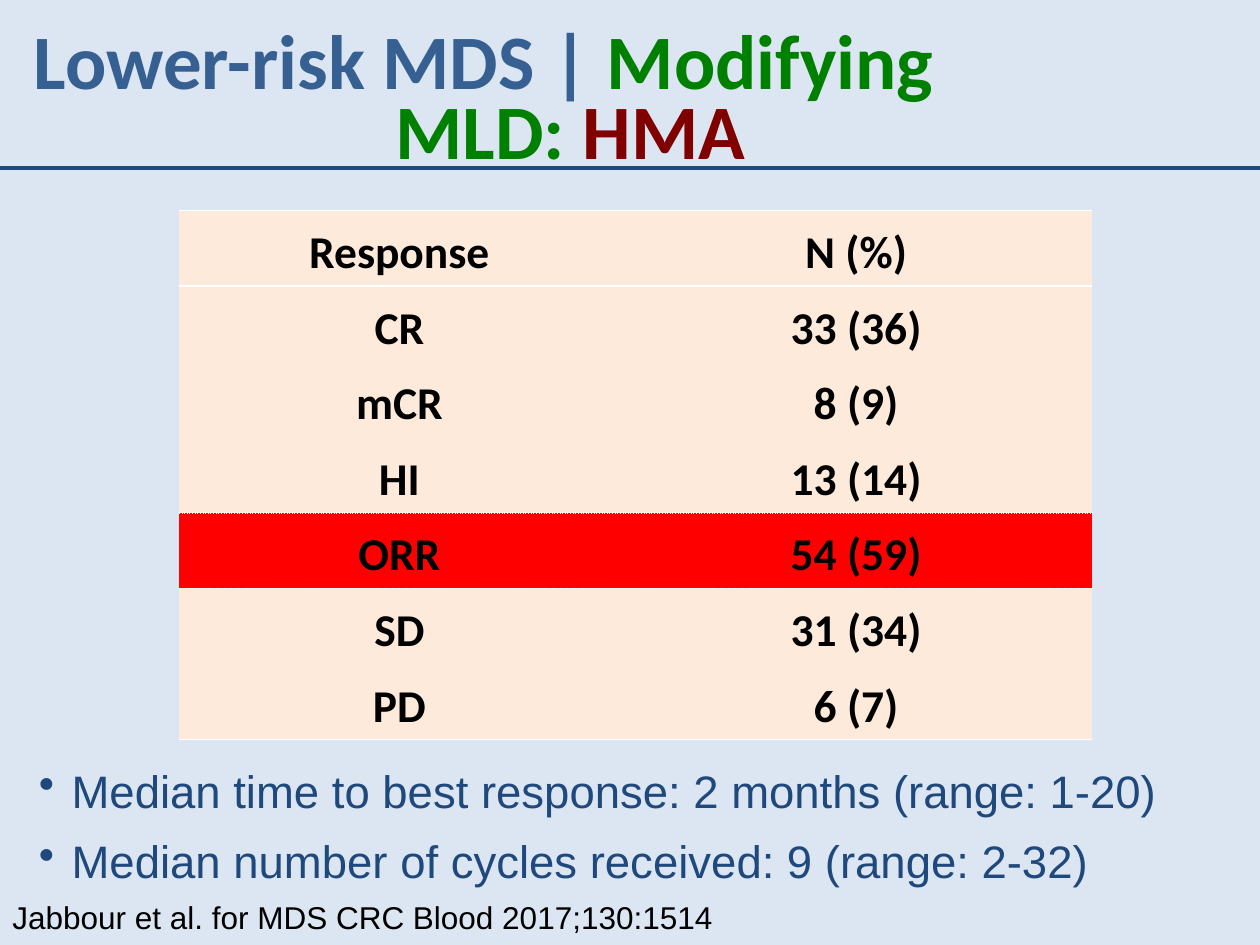
from lxml import etree
from pptx import Presentation, util as u
from pptx.dml.color import RGBColor
from pptx.enum import shapes, text
from pptx.oxml.ns import qn

THEME = {
    "background": "DCE6F2", "rule": "1F497D", "body": "1F497D", "black": "000000",
    "topic": "376092", "approach": "008000", "drug": "800000",
    "cell": "FDEADA", "highlight": "FF0000", "border": "FFFFFF",
    "heading_font": "Calibri", "body_font": "Arial",
    "title_size": 44, "body_size": 26, "source_size": 18,
}

BREAK = "\n"
TITLE = [("Lower-risk MDS | ", "topic"), ("Modifying", "approach"), (BREAK, None),
         ("MLD: ", "approach"), ("HMA", "drug")]
RESPONSES = [("Response", "N (%)"), ("CR", "33 (36)"), ("mCR", "8 (9)"), ("HI", "13 (14)"),
             ("ORR", "54 (59)"), ("SD", "31 (34)"), ("PD", "6 (7)")]
HIGHLIGHTED = "ORR"
FINDINGS = ["Median time to best response: 2 months (range: 1-20)",
            "Median number of cycles received: 9 (range: 2-32)"]
SOURCE = "Jabbour et al. for MDS CRC Blood 2017;130:1514"

WIDTH, HEIGHT = 10, 7.5
COLUMN_WIDTHS = (3.5, 3.75)
ROW_HEIGHT = 0.6
CELL_MARGIN = 0.05


def color(name):
    return RGBColor.from_string(THEME[name])


def write(paragraph, runs, size, font, bold=False, align=None, spacing=None,
          before=None, after=None, hanging=None, bullet=None):
    """Fill a paragraph with (text, colour name) runs; hanging is in inches."""
    if hanging:
        properties = paragraph._p.get_or_add_pPr()
        properties.set("marL", str(u.Inches(hanging)))
        properties.set("indent", str(-u.Inches(hanging)))
    if align is not None:
        paragraph.alignment = align
    if spacing is not None:
        paragraph.line_spacing = spacing
    if before is not None:
        paragraph.space_before = u.Pt(before)
    if after is not None:
        paragraph.space_after = u.Pt(after)
    if bullet:
        etree.SubElement(paragraph._p.get_or_add_pPr(), qn("a:buChar"), char=bullet)
    for words, color_name in runs:
        if words == BREAK:
            paragraph.add_line_break()
            continue
        run = paragraph.add_run()
        run.text = words
        run.font.size = u.Pt(THEME[size])
        run.font.name = THEME[font]
        run.font.bold = bold
        run.font.color.rgb = color(color_name)


def add_frame(slide, left, top, width, height, anchor=text.MSO_ANCHOR.TOP):
    frame = slide.shapes.add_textbox(*map(u.Inches, (left, top, width, height))).text_frame
    frame.word_wrap = True
    frame.vertical_anchor = anchor
    return frame


def set_border(cell, side, dash):
    """Draw a white border with the given dash, or none when dash is None."""
    line = etree.SubElement(cell._tc.get_or_add_tcPr(), qn("a:" + side), w=str(u.Pt(1)))
    if dash is None:
        etree.SubElement(line, qn("a:noFill"))
        return
    fill = etree.SubElement(line, qn("a:solidFill"))
    etree.SubElement(fill, qn("a:srgbClr"), val=THEME["border"])
    etree.SubElement(line, qn("a:prstDash"), val=dash)


def add_title(slide):
    frame = add_frame(slide, 0.17, 0.23, 9.67, 0.93)
    write(frame.paragraphs[0], TITLE, "title_size", "heading_font", bold=True,
          spacing=u.Pt(40), hanging=2.87)
    rule = slide.shapes.add_connector(shapes.MSO_CONNECTOR.STRAIGHT, 0, u.Inches(1.33),
                                      u.Inches(WIDTH), u.Inches(1.33))
    rule.line.color.rgb = color("rule")
    rule.line.width = u.Pt(2.25)
    etree.SubElement(rule._element.spPr, qn("a:effectLst"))


def add_responses(slide):
    count = len(RESPONSES)
    table = slide.shapes.add_table(
        count, len(COLUMN_WIDTHS), u.Inches(1.42), u.Inches(1.67),
        u.Inches(sum(COLUMN_WIDTHS)), u.Inches(count * ROW_HEIGHT)).table
    table.horz_banding = False
    for column, width in zip(table.columns, COLUMN_WIDTHS):
        column.width = u.Inches(width)

    marked = [label for label, _ in RESPONSES].index(HIGHLIGHTED)
    edges = {0: "solid", 1: "solid", marked: "sysDot", marked + 1: "sysDot", count: "solid"}
    for r, values in enumerate(RESPONSES):
        table.rows[r].height = u.Inches(ROW_HEIGHT)
        for c, value in enumerate(values):
            cell = table.cell(r, c)
            cell.margin_left = cell.margin_right = u.Inches(CELL_MARGIN)
            cell.margin_top = cell.margin_bottom = u.Inches(CELL_MARGIN)
            for side, dash in (("lnL", None), ("lnR", None),
                               ("lnT", edges.get(r)), ("lnB", edges.get(r + 1))):
                set_border(cell, side, dash)
            cell.fill.solid()
            cell.fill.fore_color.rgb = color("highlight" if r == marked else "cell")
            write(cell.text_frame.paragraphs[0], [(value, "black")], "body_size",
                  "heading_font", bold=True, align=text.PP_ALIGN.CENTER,
                  spacing=1.15, after=10)


def add_findings(slide):
    frame = add_frame(slide, 0.21, 6, 9.75, 1.1, text.MSO_ANCHOR.MIDDLE)
    for i, finding in enumerate(FINDINGS):
        paragraph = frame.add_paragraph() if i else frame.paragraphs[0]
        write(paragraph, [(finding, "body")], "body_size", "body_font",
              before=9 if i else None, hanging=0.26, bullet="•")


def main():
    deck = Presentation()
    deck.slide_width, deck.slide_height = u.Inches(WIDTH), u.Inches(HEIGHT)
    slide = deck.slides.add_slide(deck.slide_layouts[6])
    slide.background.fill.solid()
    slide.background.fill.fore_color.rgb = color("background")
    add_title(slide)
    add_responses(slide)
    add_findings(slide)
    source = add_frame(slide, 0, 7.08, 6.42, 0.4)
    write(source.paragraphs[0], [(SOURCE, "black")], "source_size", "body_font")
    deck.save("out.pptx")


if __name__ == "__main__":
    main()
